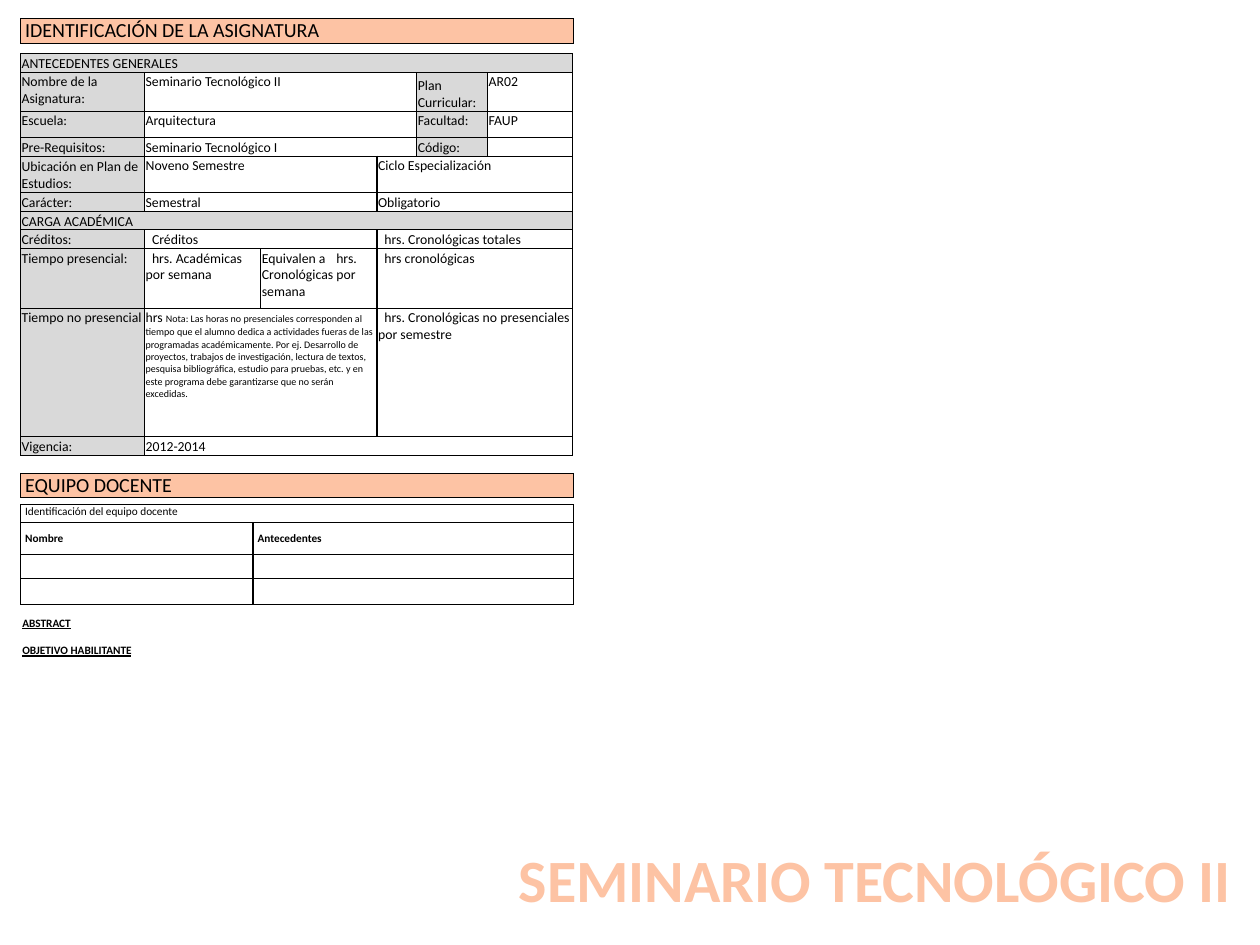
from lxml.etree import SubElement
from pptx import Presentation
from pptx.dml.color import RGBColor as Rgb
from pptx.enum.text import MSO_ANCHOR as Anchor, PP_ALIGN as Align
from pptx.oxml.ns import qn
from pptx.util import Cm, Pt

THEME = {
    "font": "Calibri", "ink": "000000", "peach": "FDC3A4", "grey": "D9D9D9",
    "course": 48, "heading": 16, "body": 11, "small": 9, "note": 8, "border": 1,
}
LEFT = 0.58
FIRST_INDENT, TAB_STOP = 0.18, 2.1

CELL_STYLES = {
    "heading": {"anchor": Anchor.TOP, "fill": "peach", "size": "heading"},
    "band": {"anchor": Anchor.BOTTOM, "fill": "grey", "size": "body"},
    "label": {"anchor": Anchor.TOP, "fill": "grey", "size": "body"},
    "label_low": {"anchor": Anchor.BOTTOM, "fill": "grey", "size": "body"},
    "value": {"anchor": Anchor.TOP, "size": "body"},
    "value_low": {"anchor": Anchor.BOTTOM, "size": "body"},
    "indented": {"anchor": Anchor.TOP, "size": "body", "indent": True},
    "indented_low": {"anchor": Anchor.BOTTOM, "size": "body", "indent": True},
    "team": {"anchor": Anchor.TOP, "size": "small"},
    "team_bold": {"anchor": Anchor.MIDDLE, "size": "small", "bold": True},
}

NOTE = (
    "Nota: Las horas no presenciales corresponden al tiempo que el alumno dedica a "
    "actividades fueras de las programadas académicamente. Por ej. Desarrollo de "
    "proyectos, trabajos de investigación, lectura de textos, pesquisa bibliográfica, "
    "estudio para pruebas, etc. y en este programa debe garantizarse que no serán excedidas."
)

WIDE_MARGINS = {"margin_left": 0.13, "margin_right": 0.13, "margin_top": 0, "margin_bottom": 0}
TIGHT_MARGINS = {"margin_left": 0.03, "margin_right": 0.03, "margin_top": 0.03, "margin_bottom": 0}


def heading_table(title, top):
    """Describe a one-cell heading bar."""
    return {"top": top, "columns": [15.6], "margins": WIDE_MARGINS,
            "rows": [(0.69, [(title, 1, "heading")])]}


TABLES = [
    heading_table("IDENTIFICACIÓN DE LA ASIGNATURA", 0.53),
    {
        "top": 1.52, "columns": [3.5, 3.28, 3.28, 1.12, 2, 2.41], "margins": TIGHT_MARGINS,
        "rows": [
            (0.53, [("ANTECEDENTES GENERALES", 6, "band")]),
            (1.09, [("Nombre de la Asignatura:", 1, "label"),
                    ("Seminario Tecnológico II", 3, "value"),
                    ("Plan Curricular:", 1, "label_low"), ("AR02", 1, "value")]),
            (0.74, [("Escuela:", 1, "label"), ("Arquitectura", 3, "value"),
                    ("Facultad:", 1, "label"), ("FAUP", 1, "value")]),
            (0.53, [("Pre-Requisitos:", 1, "label_low"),
                    ("Seminario Tecnológico I", 3, "value_low"),
                    ("Código:", 1, "label_low"), ("", 1, "value")]),
            (1.02, [("Ubicación en Plan de Estudios:", 1, "label_low"),
                    ("Noveno Semestre", 2, "value"), ("Ciclo Especialización", 3, "value")]),
            (0.53, [("Carácter:", 1, "label_low"), ("Semestral", 2, "value_low"),
                    ("Obligatorio", 3, "value_low")]),
            (0.53, [("CARGA ACADÉMICA", 6, "band")]),
            (0.53, [("Créditos:", 1, "label_low"), ("Créditos", 2, "indented_low"),
                    ("hrs. Cronológicas totales", 3, "indented")]),
            (1.68, [("Tiempo presencial:", 1, "label"),
                    ("hrs. Académicas por semana", 1, "indented"),
                    ("Equivalen a\thrs. Cronológicas por semana", 1, "value"),
                    ("hrs cronológicas", 3, "indented")]),
            (3.62, [("Tiempo no presencial", 1, "label"), (("hrs ", NOTE), 2, "value"),
                    ("hrs. Cronológicas no presenciales por semestre", 3, "indented")]),
            (0.53, [("Vigencia:", 1, "label_low"), ("2012-2014", 5, "value_low")]),
        ],
    },
    heading_table("EQUIPO DOCENTE", 13.36),
    {
        "top": 14.25, "columns": [6.56, 9.04], "margins": WIDE_MARGINS,
        "rows": [
            (0.5, [("Identificación del equipo docente", 2, "team")]),
            (0.91, [("Nombre", 1, "team_bold"), ("Antecedentes", 1, "team_bold")]),
            (0.66, [("", 1, "team"), ("", 1, "team")]),
            (0.73, [("", 1, "team"), ("", 1, "team")]),
        ],
    },
]

TEXTS = [
    {"box": (0.38, 17.27, 16, 1.42), "lines": ["ABSTRACT", "OBJETIVO HABILITANTE"],
     "align": Align.JUSTIFY, "gap": 11, "color": "ink",
     "font": {"size": Pt(THEME["small"]), "bold": True, "underline": True}},
    {"box": (13.79, 23.65, 21.21, 2.31), "lines": ["SEMINARIO TECNOLÓGICO II"],
     "align": Align.RIGHT, "gap": 0, "color": "peach",
     "font": {"size": Pt(THEME["course"]), "bold": True}},
]


def apply(target, values):
    """Set every named attribute on the target."""
    for name, value in values.items():
        setattr(target, name, value)


def add_run(paragraph, text, color, formats):
    """Append a run in the theme font."""
    run = paragraph.add_run()
    run.text = text
    apply(run.font, {"name": THEME["font"], **formats})
    run.font.color.rgb = Rgb.from_string(THEME[color])


def add_borders(cell):
    """Draw the four edges of a cell."""
    properties = cell._tc.get_or_add_tcPr()
    for position, edge in enumerate(("a:lnL", "a:lnR", "a:lnT", "a:lnB")):
        line = SubElement(properties, qn(edge), w=str(Pt(THEME["border"])))
        SubElement(SubElement(line, qn("a:solidFill")), qn("a:srgbClr"), val=THEME["ink"])
        properties.insert(position, line)


def fill_cell(cell, content, style):
    """Write the content of a cell in its named style."""
    paragraph = cell.text_frame.paragraphs[0]
    parts = content if isinstance(content, tuple) else (content,)
    for part, size in zip(parts, (style["size"], "note")):
        if part:
            add_run(paragraph, part, "ink",
                    {"size": Pt(THEME[size]), "bold": style.get("bold", False)})
    if not content:
        SubElement(paragraph._p, qn("a:endParaRPr"), sz=str(THEME[style["size"]] * 100))
    settings = paragraph._p.get_or_add_pPr()
    if style.get("indent"):
        settings.set("indent", str(Cm(FIRST_INDENT)))
    if "\t" in content:
        stops = SubElement(settings, qn("a:tabLst"))
        SubElement(stops, qn("a:tab"), pos=str(Cm(TAB_STOP)), algn="l")


def add_grid(slide, grid):
    """Build one table from its rows of spanning cells."""
    columns, rows = grid["columns"], grid["rows"]
    table = slide.shapes.add_table(
        len(rows), len(columns), Cm(LEFT), Cm(grid["top"]),
        Cm(sum(columns)), Cm(sum(height for height, _ in rows))).table
    apply(table, {"first_row": False, "horz_banding": False})
    for column, width in zip(table.columns, columns):
        column.width = Cm(width)
    margins = {side: Cm(length) for side, length in grid["margins"].items()}
    for row_index, (height, entries) in enumerate(rows):
        table.rows[row_index].height = Cm(height)
        start = 0
        for content, span, style_name in entries:
            style = CELL_STYLES[style_name]
            for column_index in range(start, start + span):
                cell = table.cell(row_index, column_index)
                apply(cell, {"vertical_anchor": style["anchor"], **margins})
                if "fill" in style:
                    cell.fill.solid()
                    cell.fill.fore_color.rgb = Rgb.from_string(THEME[style["fill"]])
                else:
                    cell.fill.background()
                add_borders(cell)
            origin = table.cell(row_index, start)
            if span > 1:
                origin.merge(table.cell(row_index, start + span - 1))
            fill_cell(origin, content, style)
            start += span


def add_text(slide, text):
    """Place a wrapped text box with one paragraph per line."""
    frame = slide.shapes.add_textbox(*map(Cm, text["box"])).text_frame
    frame.word_wrap = True
    for index, line in enumerate(text["lines"]):
        paragraph = frame.add_paragraph() if index else frame.paragraphs[0]
        apply(paragraph, {"alignment": text["align"],
                          "space_before": Pt(text["gap"] if index else 0)})
        add_run(paragraph, line, text["color"], text["font"])


def main():
    """Build and save the course identification slide."""
    deck = Presentation()
    apply(deck, {"slide_width": Cm(35.56), "slide_height": Cm(26.67)})
    slide = deck.slides.add_slide(deck.slide_layouts[6])
    for grid in TABLES:
        add_grid(slide, grid)
    for text in TEXTS:
        add_text(slide, text)
    deck.save("out.pptx")


if __name__ == "__main__":
    main()
